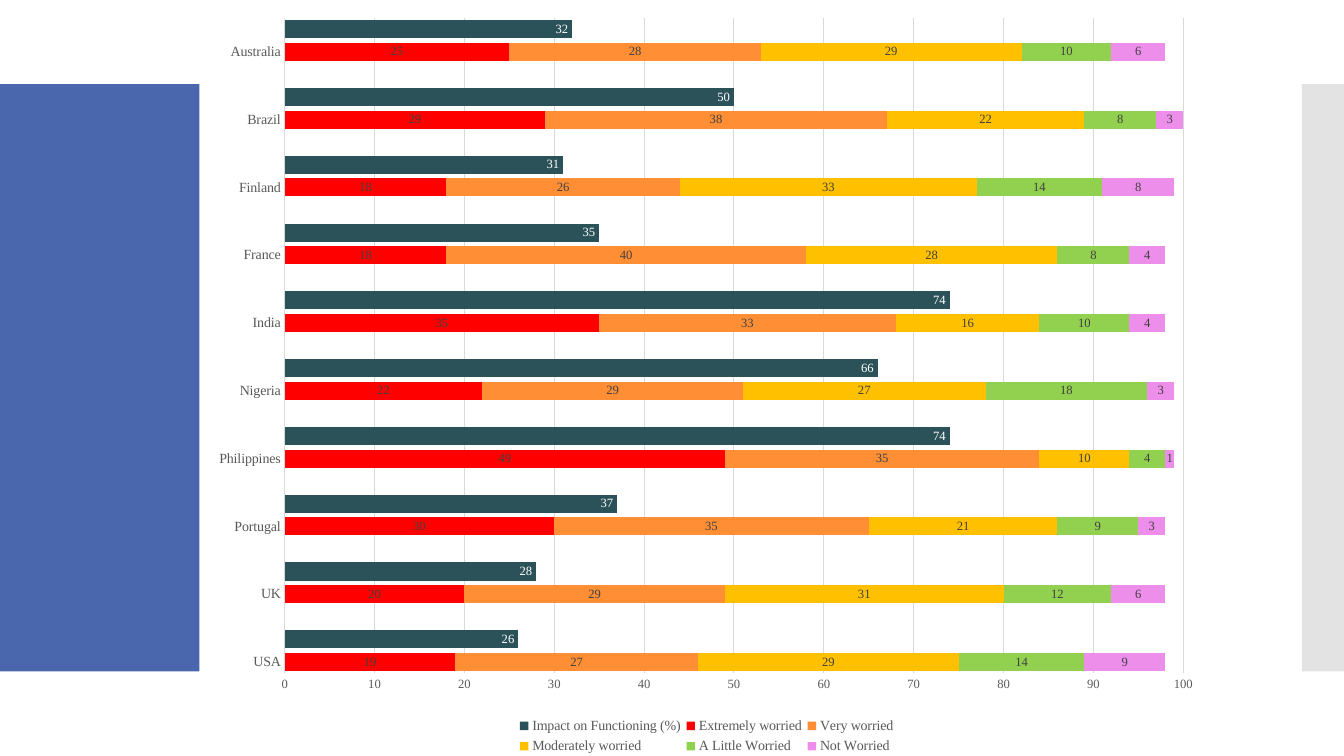
from pptx import Presentation
from pptx.chart.data import CategoryChartData as ChartData
from pptx.dml.color import RGBColor as RGB
from pptx.enum.chart import (XL_CHART_TYPE as CHART, XL_LABEL_POSITION as LABEL,
                             XL_LEGEND_POSITION as LEGEND, XL_TICK_MARK as TICK)
from pptx.enum.shapes import MSO_SHAPE as SHAPE
from pptx.oxml import parse_xml
from pptx.oxml.ns import nsdecls, qn
from pptx.util import Pt

COLORS = {
    "white": "FFFFFF", "black": "000000", "panel": "4A66AC", "edge": "C8C8C8",
    "grid": "D9D9D9", "text": "595959", "label": "404040",
    "impact": "2B5259", "extremely": "FF0000", "very": "FF8E34",
    "moderately": "FFC000", "little": "92D050", "not": "ED8EEA",
}
IMPACT_NAME = "Impact on Functioning (%)"
WORRY_SERIES = [("Extremely worried", "extremely"), ("Very worried", "very"),
                ("Moderately worried", "moderately"), ("A Little Worried", "little"),
                ("Not Worried", "not")]
# Country: impact on functioning, then the five degrees of worry
COUNTRIES = {
    "USA": (26, 19, 27, 29, 14, 9),
    "UK": (28, 20, 29, 31, 12, 6),
    "Portugal": (37, 30, 35, 21, 9, 3),
    "Philippines": (74, 49, 35, 10, 4, 1),
    "Nigeria": (66, 22, 29, 27, 18, 3),
    "India": (74, 35, 33, 16, 10, 4),
    "France": (35, 18, 40, 28, 8, 4),
    "Finland": (31, 18, 26, 33, 14, 8),
    "Brazil": (50, 29, 38, 22, 8, 3),
    "Australia": (32, 25, 28, 29, 10, 6),
}


def rgb(name):
    return RGB.from_string(COLORS[name])


def worry_data():
    """Give each country a worry row, an impact row and a spacer row."""
    data = ChartData()
    last = 3 * len(COUNTRIES) - 1
    data.categories = [c for name in COUNTRIES for c in (name, "", "")][:last]
    rows = list(COUNTRIES.values())
    impact = [v for row in rows for v in (None, row[0], None)]
    data.add_series(IMPACT_NAME, impact[:last])
    for i, (name, _) in enumerate(WORRY_SERIES, 1):
        worry = [v for row in rows for v in (row[i], None, None)]
        data.add_series(name, worry[:last])
    return data


def set_layout(parent, index, box, inner=False):
    """Place a chart part by fractions of the chart area."""
    for old in parent.findall(qn("c:layout")):
        parent.remove(old)
    target = '<c:layoutTarget val="inner"/>' if inner else ""
    modes = "".join(f'<c:{k}Mode val="edge"/>' for k in "xy")
    sizes = "".join(f'<c:{k} val="{v}"/>' for k, v in zip("xywh", box))
    parent.insert(index, parse_xml(
        f'<c:layout {nsdecls("c")}><c:manualLayout>{target}{modes}{sizes}'
        "</c:manualLayout></c:layout>"))


class Slide:
    font = "Times New Roman"

    def __init__(self, prs):
        self.s = prs.slides.add_slide(prs.slide_layouts[6])

    def style(self, font, size, color="text", name=None):
        font.name = name or self.font
        font.size = Pt(size)
        font.color.rgb = rgb(color)

    def line(self, fmt):
        fmt.color.rgb = rgb("grid")
        fmt.width = Pt(0.75)

    def panel(self, x, y, w, h, color, alpha=100):
        sp = self.s.shapes.add_shape(SHAPE.RECTANGLE, Pt(x), Pt(y), Pt(w), Pt(h))
        sp.shadow.inherit = False
        sp.line.fill.background()
        sp.fill.solid()
        sp.fill.fore_color.rgb = rgb(color)
        if alpha < 100:
            clr = sp.fill._xPr.find(".//" + qn("a:srgbClr"))
            clr.append(parse_xml(f'<a:alpha {nsdecls("a")} val="{alpha * 1000}"/>'))

    def stacked_bars(self, x, y, w, h, data, colors):
        chart = self.s.shapes.add_chart(
            CHART.BAR_STACKED, Pt(x), Pt(y), Pt(w), Pt(h), data).chart
        self.style(chart.font, 10, "black", "Calibri")
        chart.has_title = False
        space = chart.element
        space.find(qn("c:chart")).addnext(parse_xml(
            f'<c:spPr {nsdecls("c", "a")}><a:solidFill>'
            f'<a:srgbClr val="{COLORS["white"]}"/></a:solidFill>'
            "<a:ln><a:noFill/></a:ln></c:spPr>"))
        self.axes(chart)
        plot = chart.plots[0]
        plot.gap_width, plot.overlap, plot.vary_by_categories = 25, 100, False
        for ser, color in zip(plot.series, colors):
            ser.format.fill.solid()
            ser.format.fill.fore_color.rgb = rgb(color)
            ser.invert_if_negative = False
            labels = ser.data_labels
            labels.show_value = True
            is_impact = color == "impact"
            labels.position = LABEL.INSIDE_END if is_impact else LABEL.CENTER
            self.style(labels.font, 9, "white" if is_impact else "label")
        chart.has_legend = True
        chart.legend.position = LEGEND.BOTTOM
        chart.legend.include_in_layout = False
        self.style(chart.legend.font, 10)
        set_layout(space.find(".//" + qn("c:plotArea")), 0,
                   (0.084, 0.02, 0.886, 0.867), inner=True)
        set_layout(space.find(".//" + qn("c:legend")), 1, (0.31, 0.94, 0.38, 0.06))

    def axes(self, chart):
        cat, val = chart.category_axis, chart.value_axis
        for axis, size in ((cat, 10), (val, 9)):
            axis.major_tick_mark = axis.minor_tick_mark = TICK.NONE
            self.style(axis.tick_labels.font, size)
        self.line(cat.format.line)
        val.format.line.fill.background()
        val.minimum_scale, val.maximum_scale, val.major_unit = 0, 100, 10
        val.has_major_gridlines = True
        self.line(val.major_gridlines.format.line)


def main():
    prs = Presentation()
    prs.slide_width, prs.slide_height = Pt(960), Pt(540)
    slide = Slide(prs)
    slide.panel(0, 60, 271.5, 419.5, "panel")
    slide.panel(930, 60, 30, 419.5, "edge", alpha=50)
    slide.stacked_bars(142.5, 2, 724.5, 540, worry_data(),
                       ["impact"] + [color for _, color in WORRY_SERIES])
    prs.save("out.pptx")


if __name__ == "__main__":
    main()
